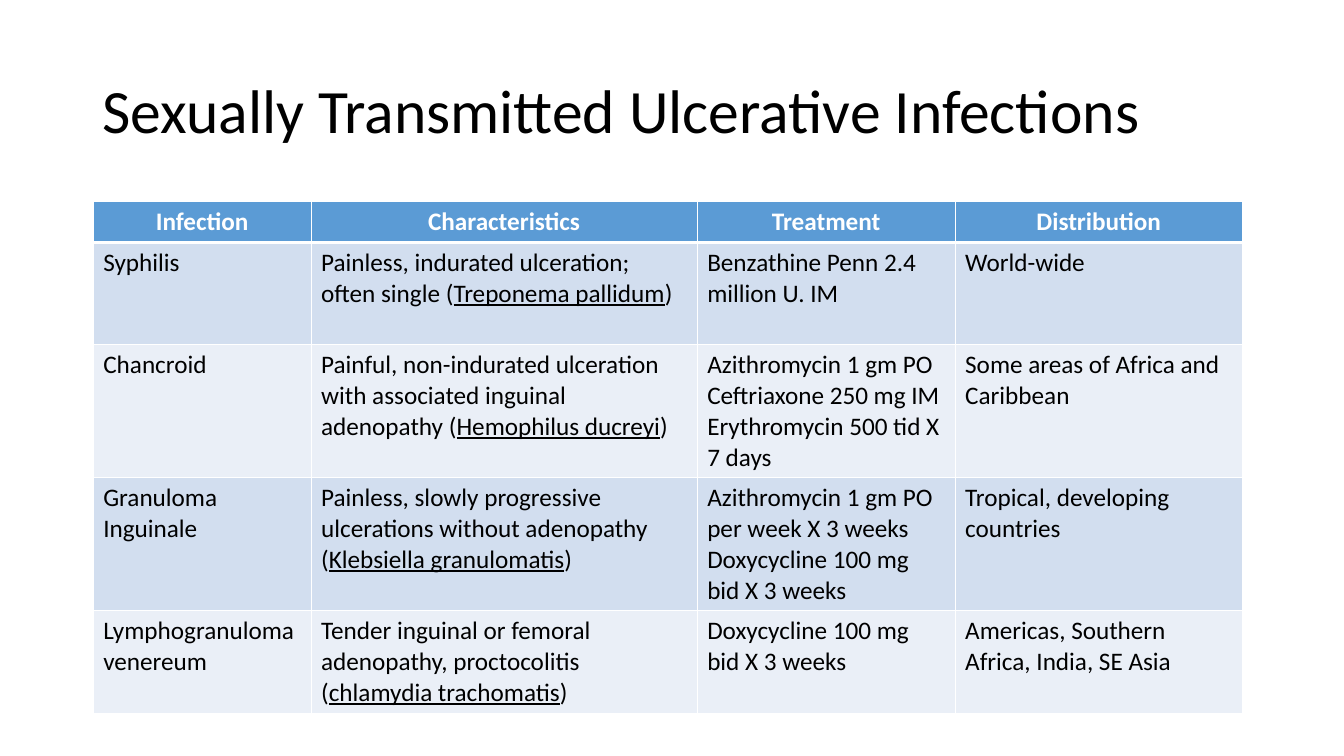
from lxml import etree
from pptx import Presentation, util as u
from pptx.dml.color import RGBColor
from pptx.enum import text
from pptx.oxml.ns import qn

COLORS = {"text": "000000", "line": "FFFFFF", "header": "5B9BD5",
          "odd": "D2DEEF", "even": "EAEFF7"}


def write(paragraph, content, size=18, color="text", bold=False, underline=False):
    run = paragraph.add_run()
    run.text = content
    run.font.name = "Calibri"
    run.font.size = u.Pt(size)
    run.font.bold = bold
    run.font.underline = underline
    run.font.color.rgb = RGBColor.from_string(COLORS[color])


def set_borders(cell, top=1, bottom=1):
    properties = cell._tc.get_or_add_tcPr()
    widths = {"lnL": 1, "lnR": 1, "lnT": top, "lnB": bottom}
    for position, (side, width) in enumerate(widths.items()):
        line = etree.Element(qn(f"a:{side}"), w=str(u.Pt(width)))
        fill = etree.SubElement(line, qn("a:solidFill"))
        etree.SubElement(fill, qn("a:srgbClr"), val=COLORS["line"])
        properties.insert(position, line)


presentation = Presentation()
presentation.slide_width = u.Cm(33.87)
presentation.slide_height = u.Cm(19.05)
slide = presentation.slides.add_slide(presentation.slide_layouts[6])

# Title
title = slide.shapes.add_textbox(u.Cm(2.33), u.Cm(1.01), u.Cm(29.21), u.Cm(3.68)).text_frame
title.word_wrap = True
title.vertical_anchor = text.MSO_ANCHOR.MIDDLE
title.paragraphs[0].line_spacing = 0.9
write(title.paragraphs[0], "Sexually Transmitted Ulcerative Infections", size=44)

# Table content: each cell is a list of paragraphs, "_" switches underline
headings = ["Infection", "Characteristics", "Treatment", "Distribution"]
infections = [
    [["Syphilis"],
     ["Painless, indurated ulceration; often single (_Treponema pallidum_)"],
     ["Benzathine Penn 2.4 million U. IM"],
     ["World-wide"]],
    [["Chancroid"],
     ["Painful, non-indurated ulceration with associated inguinal adenopathy "
      "(_Hemophilus ducreyi_)"],
     ["Azithromycin 1 gm PO", "Ceftriaxone 250 mg IM", "Erythromycin 500 tid X 7 days"],
     ["Some areas of Africa and Caribbean"]],
    [["Granuloma Inguinale"],
     ["Painless, slowly progressive ulcerations without adenopathy "
      "(_Klebsiella granulomatis_)"],
     ["Azithromycin 1 gm PO per week X 3 weeks", "Doxycycline 100 mg bid X 3 weeks"],
     ["Tropical, developing countries"]],
    [["Lymphogranuloma venereum"],
     ["Tender inguinal or femoral adenopathy, proctocolitis (_chlamydia trachomatis_)"],
     ["Doxycycline 100 mg bid X 3 weeks"],
     ["Americas, Southern Africa, India, SE Asia"]],
]
column_widths = [5.49, 9.73, 6.5, 7.24]
row_heights = [1.03, 2.58, 3.35, 3.35, 2.58]

# Table grid
table = slide.shapes.add_table(
    len(row_heights), len(column_widths), u.Cm(2.35), u.Cm(5.08),
    u.Cm(sum(column_widths)), u.Cm(sum(row_heights))).table
for column, width in zip(table.columns, column_widths):
    column.width = u.Cm(width)
for row, height in zip(table.rows, row_heights):
    row.height = u.Cm(height)

# Header row
for column, heading in enumerate(headings):
    cell = table.cell(0, column)
    cell.fill.solid()
    cell.fill.fore_color.rgb = RGBColor.from_string(COLORS["header"])
    cell.vertical_anchor = text.MSO_ANCHOR.MIDDLE
    set_borders(cell, bottom=3)
    paragraph = cell.text_frame.paragraphs[0]
    paragraph.alignment = text.PP_ALIGN.CENTER
    write(paragraph, heading, color="line", bold=True)

# Infection rows
for row, infection in enumerate(infections, start=1):
    for column, entries in enumerate(infection):
        cell = table.cell(row, column)
        cell.fill.solid()
        cell.fill.fore_color.rgb = RGBColor.from_string(COLORS["odd" if row % 2 else "even"])
        set_borders(cell, top=3 if row == 1 else 1)
        for index, entry in enumerate(entries):
            frame = cell.text_frame
            paragraph = frame.add_paragraph() if index else frame.paragraphs[0]
            for part, content in enumerate(entry.split("_")):
                write(paragraph, content, underline=part % 2 == 1)

presentation.save("out.pptx")
